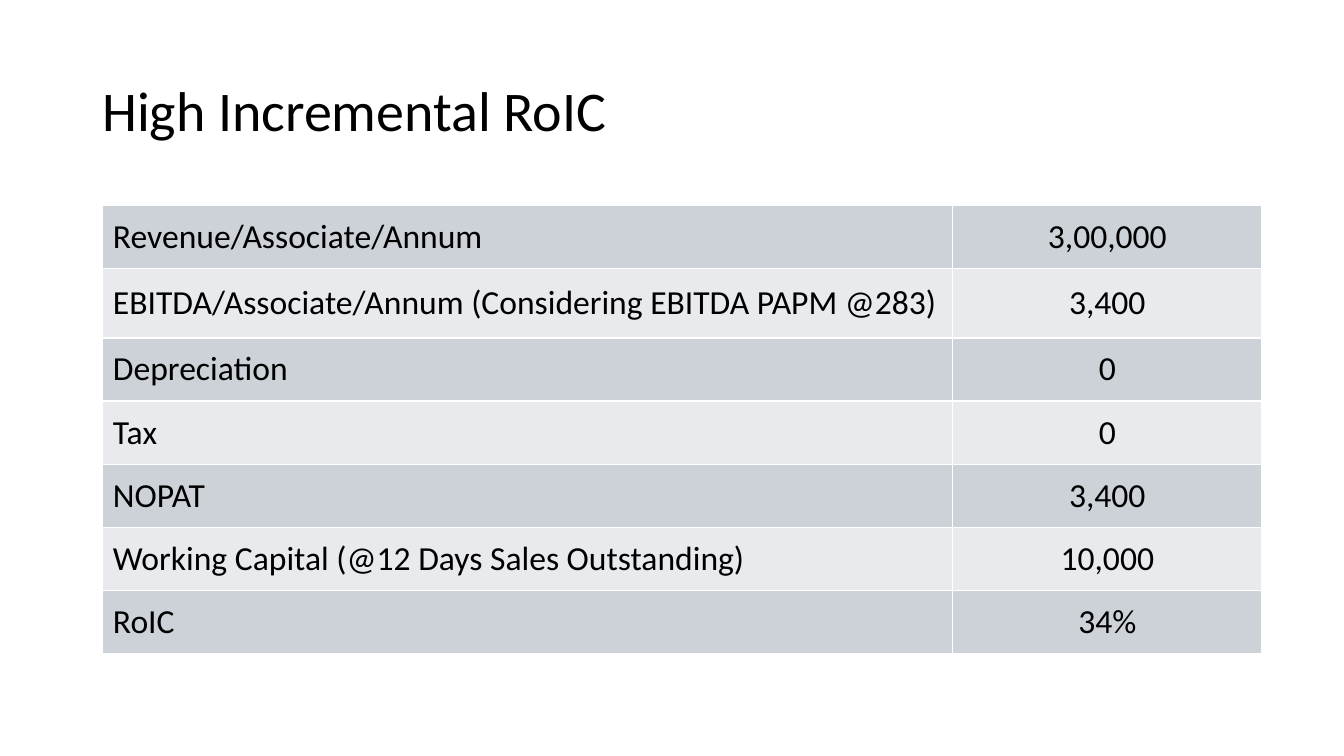
from dataclasses import dataclass

from lxml.etree import SubElement
from pptx import Presentation
from pptx.dml.color import RGBColor as Rgb
from pptx.enum.text import MSO_ANCHOR as Anchor, PP_ALIGN as Align
from pptx.oxml.ns import qn
from pptx.slide import Slide
from pptx.table import _Cell as Cell
from pptx.text.text import _Paragraph as Paragraph
from pptx.util import Pt


@dataclass(frozen=True)
class Theme:
    font: str = "Calibri"
    title_size: float = 40
    body_size: float = 24
    ink: str = "000000"
    border: str = "FFFFFF"
    border_width: float = 1
    bands: tuple[str, str] = ("CCD2D8", "E8EAED")


@dataclass(frozen=True)
class Metric:
    label: str
    value: str
    height: float = 45.1


THEME = Theme()
HEADLINE = "High Incremental RoIC"
COLUMN_WIDTHS = (607, 221)
METRICS = (
    Metric("Revenue/Associate/Annum", "3,00,000"),
    Metric("EBITDA/Associate/Annum (Considering EBITDA PAPM @283)", "3,400", 49.8),
    Metric("Depreciation", "0"),
    Metric("Tax", "0"),
    Metric("NOPAT", "3,400"),
    Metric("Working Capital (@12 Days Sales Outstanding)", "10,000"),
    Metric("RoIC", "34%"),
)


def write(paragraph: Paragraph, text: str, size: float) -> None:
    run = paragraph.add_run()
    run.text = text
    for attribute, value in {"name": THEME.font, "size": Pt(size)}.items():
        setattr(run.font, attribute, value)
    run.font.color.rgb = Rgb.from_string(THEME.ink)


def add_borders(cell: Cell) -> None:
    properties = cell._tc.get_or_add_tcPr()
    for side in ("a:lnL", "a:lnR", "a:lnT", "a:lnB"):
        line = SubElement(properties, qn(side), w=str(Pt(THEME.border_width)))
        fill = SubElement(line, qn("a:solidFill"))
        SubElement(fill, qn("a:srgbClr"), val=THEME.border)


def fill_cell(cell: Cell, text: str, align: Align, band: str) -> None:
    add_borders(cell)
    cell.fill.solid()
    cell.fill.fore_color.rgb = Rgb.from_string(band)
    cell.vertical_anchor = Anchor.MIDDLE
    paragraph = cell.text_frame.paragraphs[0]
    paragraph.alignment = align
    write(paragraph, text, THEME.body_size)


def add_headline(slide: Slide) -> None:
    headline = slide.shapes.add_textbox(Pt(66), Pt(28.75), Pt(828), Pt(104.4))
    frame = headline.text_frame
    for attribute, value in {"word_wrap": True, "vertical_anchor": Anchor.MIDDLE}.items():
        setattr(frame, attribute, value)
    frame.paragraphs[0].line_spacing = 0.9
    write(frame.paragraphs[0], HEADLINE, THEME.title_size)


def add_metrics(slide: Slide) -> None:
    height = sum(metric.height for metric in METRICS)
    metrics = slide.shapes.add_table(
        len(METRICS), len(COLUMN_WIDTHS),
        Pt(73.5), Pt(146.5), Pt(sum(COLUMN_WIDTHS)), Pt(height),
    ).table
    for attribute, value in {"first_row": False, "horz_banding": False}.items():
        setattr(metrics, attribute, value)
    for column, width in zip(metrics.columns, COLUMN_WIDTHS):
        column.width = Pt(width)
    for index, metric in enumerate(METRICS):
        metrics.rows[index].height = Pt(metric.height)
        band = THEME.bands[index % 2]
        fill_cell(metrics.cell(index, 0), metric.label, Align.LEFT, band)
        fill_cell(metrics.cell(index, 1), metric.value, Align.CENTER, band)


def main() -> None:
    deck = Presentation()
    deck.slide_width, deck.slide_height = Pt(960), Pt(540)
    slide = deck.slides.add_slide(deck.slide_layouts[6])
    add_headline(slide)
    add_metrics(slide)
    deck.save("out.pptx")


if __name__ == "__main__":
    main()
